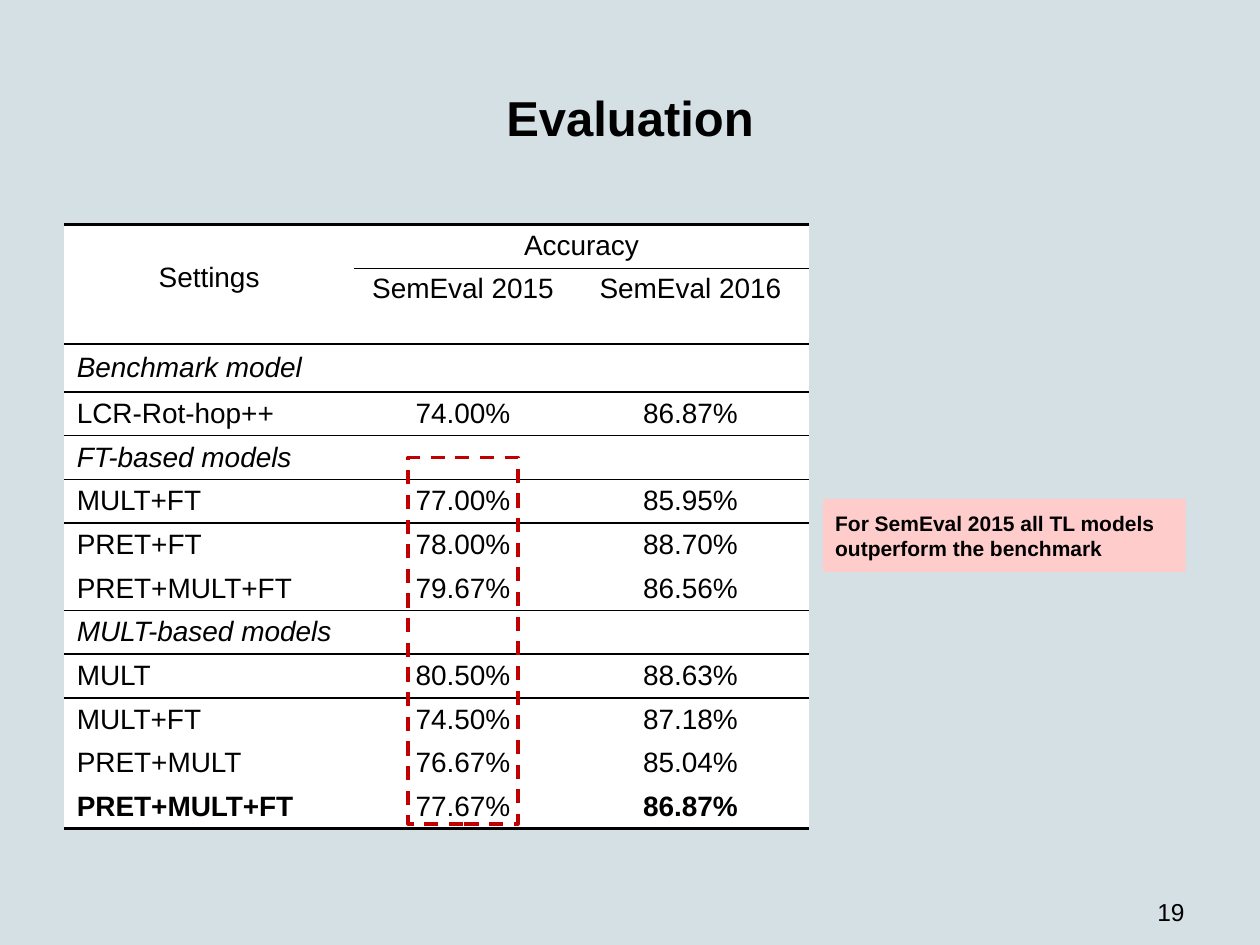
from lxml.etree import SubElement
from pptx import Presentation
from pptx.dml.color import RGBColor
from pptx.enum.dml import MSO_LINE
from pptx.enum.shapes import MSO_SHAPE
from pptx.enum.text import MSO_ANCHOR, PP_ALIGN
from pptx.oxml.ns import qn
from pptx.util import Inches, Pt

COLORS = {"bg": "D5E0E5", "ink": "000000", "cell": "FFFFFF",
          "mark": "C00000", "note": "FFCCCC"}
FONT = "Arial"
NO_STYLE = "{2D5ABB26-0587-4C30-8999-92F81FD0307C}"

COLS = [2.3, 1.73, 1.88]
ROWS = [0.35, 0.6, 0.38] + [0.347] * 10
DATA = [
    ("Settings", "Accuracy", ""),
    ("", "SemEval 2015", "SemEval 2016"),
    ("Benchmark model", "", ""),
    ("LCR-Rot-hop++", "74.00%", "86.87%"),
    ("FT-based models", "", ""),
    ("MULT+FT", "77.00%", "85.95%"),
    ("PRET+FT", "78.00%", "88.70%"),
    ("PRET+MULT+FT", "79.67%", "86.56%"),
    ("MULT-based models", "", ""),
    ("MULT", "80.50%", "88.63%"),
    ("MULT+FT", "74.50%", "87.18%"),
    ("PRET+MULT", "76.67%", "85.04%"),
    ("PRET+MULT+FT", "77.67%", "86.87%"),
]
HEADER_ROWS = 2
SECTIONS = (2, 4, 8)
BOLD_CELLS = {(12, 0), (12, 2)}
RULES = {0: 2, 1: 1, 2: 1, 3: 1, 4: 1, 5: 1, 8: 1, 9: 1, len(DATA): 2}


def rgb(name):
    return RGBColor.from_string(COLORS[name])


def style(p, size, bold=False, italic=False, align=PP_ALIGN.LEFT):
    p.alignment = align
    f = p.font
    f.name, f.size, f.bold, f.italic = FONT, Pt(size), bold, italic
    f.color.rgb = rgb("ink")


def add_border(cell, side, width):
    ln = SubElement(cell._tc.get_or_add_tcPr(), qn(f"a:{side}"), w=str(Pt(width)))
    fill = SubElement(ln, qn("a:solidFill"))
    SubElement(fill, qn("a:srgbClr"), val=COLORS["ink"])


def add_title(s, box, text):
    title = s.shapes.title
    title.left, title.top, title.width, title.height = map(Inches, box)
    tf = title.text_frame
    tf.text = text
    tf.vertical_anchor = MSO_ANCHOR.MIDDLE
    style(tf.paragraphs[0], 28, bold=True, align=PP_ALIGN.CENTER)


def fill_cell(cell, i, j):
    cell.margin_top = cell.margin_bottom = Inches(0.04)
    cell.vertical_anchor = MSO_ANCHOR.TOP if i == 1 else MSO_ANCHOR.MIDDLE
    p = cell.text_frame.paragraphs[0]
    if DATA[i][j]:
        p.text = DATA[i][j]
    else:
        p._p.get_or_add_endParaRPr().set("sz", "1600")
    centred = j > 0 or i < HEADER_ROWS
    style(p, 16, (i, j) in BOLD_CELLS, i in SECTIONS,
          PP_ALIGN.CENTER if centred else PP_ALIGN.LEFT)
    for side, edge in (("lnT", i), ("lnB", i + 1)):
        if edge in RULES and not (edge == 1 and j == 0):
            add_border(cell, side, RULES[edge])
    cell.fill.solid()
    cell.fill.fore_color.rgb = rgb("cell")


def add_results(s, left, top):
    frame = s.shapes.add_table(len(ROWS), len(COLS), Inches(left), Inches(top),
                               Inches(sum(COLS)), Inches(sum(ROWS)))
    table = frame.table
    table.first_row = table.horz_banding = False
    table._tbl.tblPr.find(qn("a:tableStyleId")).text = NO_STYLE
    for col, width in zip(table.columns, COLS):
        col.width = Inches(width)
    for row, height in zip(table.rows, ROWS):
        row.height = Inches(height)
    for i in range(len(ROWS)):
        for j in range(len(COLS)):
            fill_cell(table.cell(i, j), i, j)
    table.cell(0, 0).merge(table.cell(1, 0))
    table.cell(0, 1).merge(table.cell(0, 2))
    table.cell(0, 0).margin_bottom = Inches(0.14)


def add_rect(s, box):
    sp = s.shapes.add_shape(MSO_SHAPE.RECTANGLE, *map(Inches, box))
    sp.shadow.inherit = False
    return sp


def add_highlight(s, box):
    sp = add_rect(s, box)
    sp.fill.background()
    sp.line.color.rgb = rgb("mark")
    sp.line.width = Pt(2)
    sp.line.dash_style = MSO_LINE.DASH


def add_note(s, box, text):
    sp = add_rect(s, box)
    sp.fill.solid()
    sp.fill.fore_color.rgb = rgb("note")
    sp.line.fill.background()
    tf = sp.text_frame
    tf.word_wrap = True
    tf.vertical_anchor = MSO_ANCHOR.MIDDLE
    tf.text = text
    style(tf.paragraphs[0], 12, bold=True)


def add_page_number(s, box, text):
    tf = s.shapes.add_textbox(*map(Inches, box)).text_frame
    tf.word_wrap = True
    tf.vertical_anchor = MSO_ANCHOR.BOTTOM
    tf.margin_bottom = 0
    tf.text = text
    style(tf.paragraphs[0], 14, align=PP_ALIGN.RIGHT)


def main():
    prs = Presentation()
    prs.slide_width, prs.slide_height = Inches(10), Inches(7.5)
    s = prs.slides.add_slide(prs.slide_layouts[5])
    s.background.fill.solid()
    s.background.fill.fore_color.rgb = rgb("bg")
    add_title(s, (0.5, 0.3, 9, 1.25), "Evaluation")
    add_page_number(s, (7.17, 6.83, 2.33, 0.52), "19")
    add_results(s, 0.51, 1.78)
    add_highlight(s, (3.24, 3.63, 0.87, 2.91))
    add_note(s, (6.53, 3.96, 2.88, 0.58),
             "For SemEval 2015 all TL models outperform the benchmark")
    prs.save("out.pptx")


if __name__ == "__main__":
    main()
